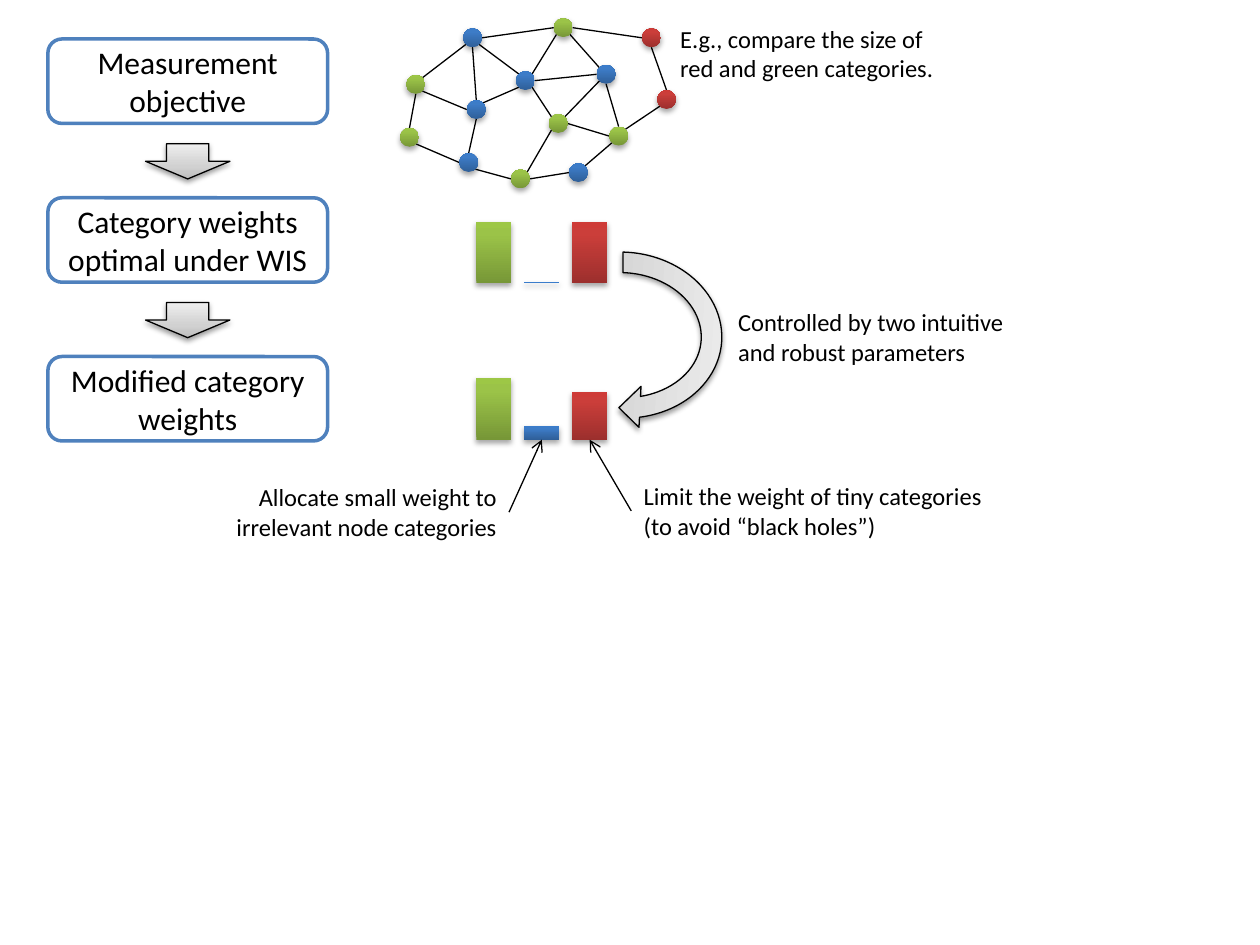
from lxml.etree import SubElement
from pptx import Presentation
from pptx.dml.color import RGBColor
from pptx.enum.shapes import MSO_CONNECTOR, MSO_SHAPE
from pptx.enum.text import MSO_ANCHOR, MSO_AUTO_SIZE, PP_ALIGN
from pptx.oxml.ns import qn
from pptx.util import Inches, Pt

# Content
STEPS = ["Measurement objective", "Category weights optimal under WIS", "Modified category weights"]
NOTES = {  # name: (left, top, width, alignment, text)
    "example": (5.3, 0.14, 2.46, PP_ALIGN.LEFT, "E.g., compare the size of\vred and green categories."),
    "control": (5.76, 2.39, 2.54, PP_ALIGN.LEFT, "Controlled by two intuitive and robust parameters"),
    "allocate": (1.42, 3.78, 2.62, PP_ALIGN.RIGHT, "Allocate small weight to irrelevant node categories"),
    "limit": (5.01, 3.77, 3.07, PP_ALIGN.LEFT, "Limit the weight of tiny categories\v(to avoid “black holes”)"),
}
BAR_COLOURS = ["green", "blue", "red"]
OPTIMAL_WEIGHTS = [0.49, 0.01, 0.49]
MODIFIED_WEIGHTS = [0.49, 0.11, 0.38]
NODES = {  # name: (centre x, centre y, category)
    "A": (4.81, 0.59, "blue"), "B": (3.72, 1.29, "blue"), "C": (4.13, 1.42, "green"),
    "D": (3.30, 0.67, "green"), "E": (4.91, 1.08, "green"), "F": (3.78, 0.87, "blue"),
    "G": (5.29, 0.79, "red"), "H": (4.59, 1.37, "blue"), "I": (5.17, 0.30, "red"),
    "J": (4.43, 0.98, "green"), "K": (4.17, 0.64, "blue"), "L": (3.25, 1.09, "green"),
    "M": (4.47, 0.22, "green"), "N": (3.75, 0.30, "blue"),
}
EDGES = [  # node and compass side at each end
    "E n A s", "K ne M sw", "I s G n", "M e I w", "A sw J ne", "G sw E ne",
    "E sw H ne", "J sw C ne", "K se J nw", "F ne K sw", "F s B n", "D se F w",
    "D s L n", "L se B w", "B se C w", "C e H w", "J e E w", "N e M w",
    "N se K nw", "D ne N sw", "N s F n", "M se A nw", "K e A w",
]

# Theme and grid
THEME = {
    "font": "Calibri", "step_size": 18, "note_size": 14, "border": 2, "hairline": 0.75,
    "text": "000000", "paper": "FFFFFF", "outline": "4F81BD",
    "green": [(0, "779737"), (80, "9BC348"), (100, "9DC746")],
    "blue": [(0, "2F5F99"), (80, "3D7CC7"), (100, "3A7CCB")],
    "red": [(0, "9C2F2D"), (80, "CB3E3A"), (100, "CE3B37")],
    "grey": [(0, "BDBDBD"), (35, "D1D1D1"), (100, "EEEEEE")],
}
STEP_LEFT, STEP_TOP, STEP_WIDTH, STEP_HEIGHT, ROW = 0.38, 0.31, 2.22, 0.67, 1.26
ARROW_WIDTH, ARROW_HEIGHT, ARROW_OFFSET = 0.67, 0.28, 0.83
BAR_LEFT, BAR_WIDTH, BAR_PITCH = 3.78, 0.28, 0.38
OPTIMAL_BASE, MODIFIED_BASE = 2.25, 3.49
NODE_SIZE, NOTE_HEIGHT = 0.15, 0.57


def apply(target, values):
    for name, value in values.items():
        setattr(target, name, value)


def colour(name):
    return RGBColor.from_string(THEME[name])


def write(shape, text, size, alignment, values):
    frame = shape.text_frame
    apply(frame, {"word_wrap": True, **values})
    frame.text = text
    paragraph = frame.paragraphs[0]
    paragraph.alignment = alignment
    for run in paragraph.runs:
        apply(run.font, {"name": THEME["font"], "size": Pt(THEME[size])})
        run.font.color.rgb = colour("text")


def add_shape(parent, kind, left, top, width, height):
    shape = parent.add_shape(kind, Inches(left), Inches(top), Inches(width), Inches(height))
    shape.shadow.inherit = False
    return shape


def add_shaded(parent, kind, box, category, outlined=False):
    """Shape with an upward gradient and a soft shadow below it."""
    shape = add_shape(parent, kind, *box)
    shape.fill.gradient()
    properties = shape._element.spPr
    gradient = properties.find(qn("a:gradFill"))
    for child in list(gradient):
        gradient.remove(child)
    stops = SubElement(gradient, qn("a:gsLst"))
    for position, value in THEME[category]:
        stop = SubElement(stops, qn("a:gs"), pos=str(position * 1000))
        SubElement(stop, qn("a:srgbClr"), val=value)
    SubElement(gradient, qn("a:lin"), ang="16200000", scaled="0")
    if outlined:
        shape.line.color.rgb = colour("text")
        shape.line.width = Pt(THEME["hairline"])
    else:
        shape.line.fill.background()
    distance, alpha = (1.6, 38) if outlined else (1.8, 35)
    shadow = SubElement(properties.find(qn("a:effectLst")), qn("a:outerShdw"), blurRad=str(Pt(3.1)),
                        dist=str(Pt(distance)), dir="5400000", rotWithShape="0")
    black = SubElement(shadow, qn("a:srgbClr"), val=THEME["text"])
    SubElement(black, qn("a:alpha"), val=str(alpha * 1000))
    return shape


def add_line(parent, start=(0, 0), end=(0, 0)):
    line = parent.add_connector(MSO_CONNECTOR.STRAIGHT, *(Inches(value) for value in (*start, *end)))
    line.line.color.rgb = colour("text")
    line.line.width = Pt(THEME["hairline"])
    SubElement(line._element.spPr, qn("a:effectLst"))
    return line


def add_bars(parent, weights, base):
    return {
        category: add_shaded(parent, MSO_SHAPE.RECTANGLE,
                             (BAR_LEFT + column * BAR_PITCH, base - weight, BAR_WIDTH, weight), category)
        for column, (category, weight) in enumerate(zip(BAR_COLOURS, weights))
    }


def node_side(name, side):
    x, y, _ = NODES[name]
    reach = NODE_SIZE / 2 * (0.71 if len(side) == 2 else 1)
    return (x + reach * (("e" in side) - ("w" in side)),
            y + reach * (("s" in side) - ("n" in side)))


def main():
    presentation = Presentation()
    apply(presentation, {"slide_width": Inches(10), "slide_height": Inches(7.5)})
    shapes = presentation.slides.add_slide(presentation.slide_layouts[6]).shapes

    # Steps with arrows between them
    for row, text in enumerate(STEPS):
        top = STEP_TOP + row * ROW
        step = add_shape(shapes, MSO_SHAPE.ROUNDED_RECTANGLE, STEP_LEFT, top, STEP_WIDTH, STEP_HEIGHT)
        step.fill.solid()
        step.fill.fore_color.rgb = colour("paper")
        step.line.color.rgb = colour("outline")
        step.line.width = Pt(THEME["border"])
        write(step, text, "step_size", PP_ALIGN.CENTER, {"vertical_anchor": MSO_ANCHOR.MIDDLE})
        if row < len(STEPS) - 1:
            left = STEP_LEFT + (STEP_WIDTH - ARROW_WIDTH) / 2
            add_shaded(shapes, MSO_SHAPE.DOWN_ARROW,
                       (left, top + ARROW_OFFSET, ARROW_WIDTH, ARROW_HEIGHT), "grey", True)

    # Notes
    notes = {}
    for name, (left, top, width, alignment, text) in NOTES.items():
        notes[name] = shapes.add_textbox(Inches(left), Inches(top), Inches(width), Inches(NOTE_HEIGHT))
        write(notes[name], text, "note_size", alignment, {"auto_size": MSO_AUTO_SIZE.SHAPE_TO_FIT_TEXT})

    # Network of categorised nodes
    network = shapes.add_group_shape().shapes
    for edge in EDGES:
        first, first_side, second, second_side = edge.split()
        add_line(network, node_side(first, first_side), node_side(second, second_side))
    for x, y, category in NODES.values():
        box = (x - NODE_SIZE / 2, y - NODE_SIZE / 2, NODE_SIZE, NODE_SIZE)
        add_shaded(network, MSO_SHAPE.OVAL, box, category)

    # Weights before and after the change
    add_bars(shapes.add_group_shape().shapes, OPTIMAL_WEIGHTS, OPTIMAL_BASE)
    modified = add_bars(shapes, MODIFIED_WEIGHTS, MODIFIED_BASE)
    turn = add_shaded(shapes, MSO_SHAPE.CIRCULAR_ARROW, (4.2, 1.79, 1.48, 1.74), "grey", True)
    turn.rotation = 93.7
    for index, value in enumerate([0.11, 9.93, 205.55, 106.01, 0.11]):
        turn.adjustments[index] = value

    # Pointers from the notes to the modified bars
    for name, side, category in [("limit", 1, "red"), ("allocate", 3, "blue")]:
        pointer = add_line(shapes)
        pointer.begin_connect(notes[name], side)
        pointer.end_connect(modified[category], 2)
        SubElement(pointer.line._get_or_add_ln(), qn("a:tailEnd"), type="arrow")

    presentation.save("out.pptx")


if __name__ == "__main__":
    main()
